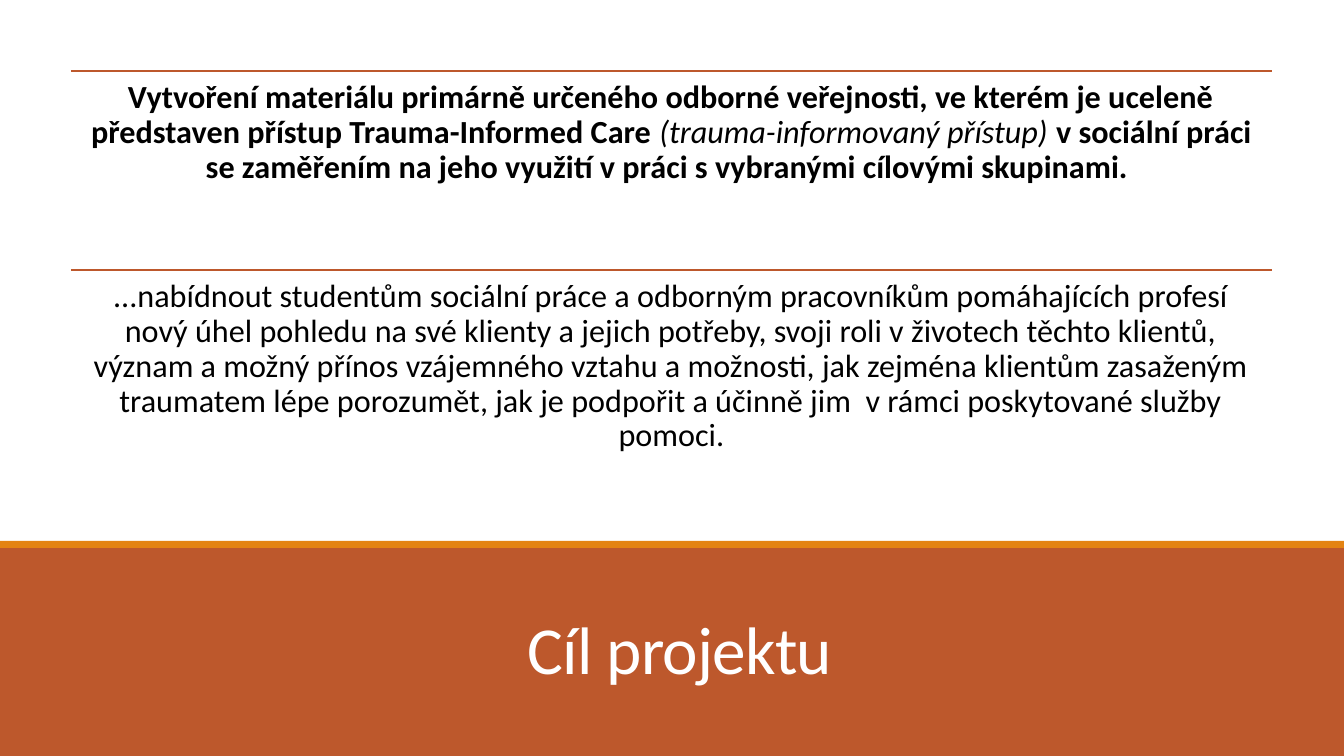
from lxml import etree
from pptx import Presentation
from pptx import util as u
from pptx.dml.color import RGBColor
from pptx.enum import shapes, text
from pptx.oxml import ns

PX = 914400 / 100.8
RUST = RGBColor(0xBD, 0x58, 0x2C)
AMBER = RGBColor(0xE4, 0x83, 0x12)
WHITE = RGBColor(0xFF, 0xFF, 0xFF)
BLACK = RGBColor(0x00, 0x00, 0x00)


def px(*nums):
    return [u.Emu(round(n * PX)) for n in nums]


deck = Presentation()
deck.slide_width, deck.slide_height = px(1344, 756)
slide = deck.slides.add_slide(deck.slide_layouts[5])

for top, height, color in [(546, 210, RUST), (541, 7, AMBER)]:
    band = slide.shapes.add_shape(shapes.MSO_SHAPE.RECTANGLE, *px(0, top, 1344, height))
    band.shadow.inherit = False
    band.fill.solid()
    band.fill.fore_color.rgb = color
    band.line.fill.background()

title = slide.shapes.title
title.element.getparent().append(title.element)
title.left, title.top, title.width, title.height = px(118, 579, 1109, 114)
frame = title.text_frame
frame.auto_size = text.MSO_AUTO_SIZE.NONE
frame.vertical_anchor = text.MSO_ANCHOR.BOTTOM
para = frame.paragraphs[0]
para.alignment = text.PP_ALIGN.CENTER
para.line_spacing = 0.85
para.font.name = "Calibri"
para.font.size = u.Pt(48)
para.font.color.rgb = WHITE
run = para.add_run()
run.text = " Cíl projektu"
run.font.name = "Calibri"
run._r.get_or_add_rPr().set("spc", "-50")

goals = [
    [
        ("Vytvoření materiálu primárně určeného odborné veřejnosti, ve kterém je "
         "uceleně představen přístup Trauma-Informed Care ", True, False),
        ("(trauma-informovaný přístup) ", False, True),
        ("v sociální práci se zaměřením na jeho využití v práci s vybranými "
         "cílovými skupinami. ", True, False),
    ],
    [
        ("...nabídnout studentům sociální práce a odborným pracovníkům pomáhajících "
         "profesí nový úhel pohledu na své klienty a jejich potřeby, svoji roli v "
         "životech těchto klientů, význam a možný přínos vzájemného vztahu a možnosti, "
         "jak zejména klientům zasaženým traumatem lépe porozumět, jak je podpořit a "
         "účinně jim  v rámci poskytované služby pomoci.", False, False),
    ],
]
for row, goal in enumerate(goals):
    top = 71 + 199 * row
    rule = slide.shapes.add_connector(shapes.MSO_CONNECTOR.STRAIGHT, *px(71, top, 1272, top))
    rule.line.color.rgb = RUST
    rule.line.width = u.Pt(1.25)
    etree.SubElement(rule.element.spPr, ns.qn("a:effectLst"))

    frame = slide.shapes.add_textbox(*px(71, top, 1201, 199)).text_frame
    frame.word_wrap = True
    frame.margin_left, frame.margin_top, frame.margin_right, frame.margin_bottom = px(*[10] * 4)
    para = frame.paragraphs[0]
    para.alignment = text.PP_ALIGN.CENTER
    para.line_spacing = 0.9
    para.space_after = u.Pt(8)
    para.font.name = "Calibri"
    para.font.size = u.Pt(23)
    para.font.color.rgb = BLACK
    for words, bold, slant in goal:
        run = para.add_run()
        run.text = words
        run.font.bold = bold
        run.font.italic = slant

deck.save("out.pptx")
